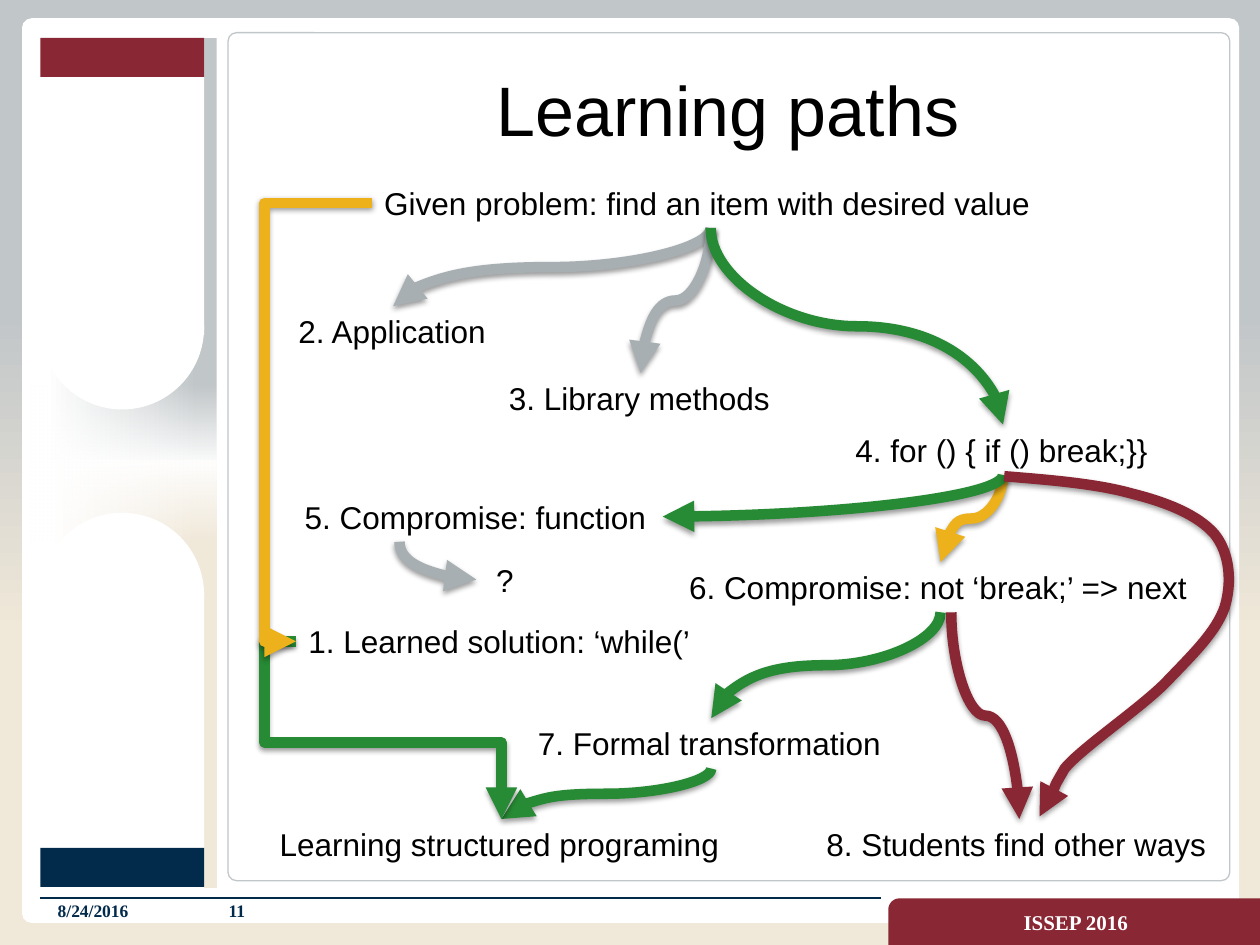
from dataclasses import dataclass

from lxml.etree import SubElement
from pptx import Presentation
from pptx.dml.color import RGBColor
from pptx.enum.shapes import MSO_CONNECTOR as Link, MSO_SHAPE as Shape
from pptx.enum.text import MSO_ANCHOR as Anchor, MSO_AUTO_SIZE as AutoSize, PP_ALIGN as Align
from pptx.oxml.ns import qn
from pptx.util import Inches, Pt


@dataclass(frozen=True)
class Theme:
    white: str = "FFFFFF"
    black: str = "000000"
    silver: str = "C1C6C8"
    sand: str = "F0E8D9"
    maroon: str = "8A2734"
    navy: str = "022A4B"
    gray: str = "A8AFB2"
    green: str = "278A34"
    amber: str = "EDB21B"
    sans: str = "Arial"
    serif: str = "Times New Roman"
    title: int = 40
    body: int = 18
    footer: int = 12
    small: int = 10
    arrow: int = 6


@dataclass(frozen=True)
class Box:
    x: float
    y: float
    w: float
    h: float

    def inner(self, x, y, w, h):
        return Box(self.x + x, self.y + y, w, h)

    def emu(self):
        return [Inches(v) for v in (self.x, self.y, self.w, self.h)]

    @property
    def top(self):
        return self.x + self.w / 2, self.y

    @property
    def bottom(self):
        return self.x + self.w / 2, self.y + self.h

    @property
    def left(self):
        return self.x, self.y + self.h / 2

    @property
    def right(self):
        return self.x + self.w, self.y + self.h / 2


T = Theme()
LABELS = {  # place in the diagram and wording
    "problem": (0.85, 0, 5.38, "Given problem: find an item with desired value"),
    "while": (0.25, 3.48, 3.26, "1. Learned solution: ‘while(’"),
    "application": (0.17, 1.02, 1.7, "2. Application"),
    "library": (1.84, 1.55, 2.29, "3. Library methods"),
    "for": (4.59, 1.96, 2.54, "4. for () { if () break;}}"),
    "function": (0.22, 2.49, 2.94, "5. Compromise: function"),
    "unknown": (1.74, 2.99, 0.34, "?"),
    "next": (3.27, 3.05, 4.19, "6. Compromise: not ‘break;’ => next"),
    "formal": (2.07, 4.29, 2.95, "7. Formal transformation"),
    "structured": (0.02, 5.09, 3.72, "Learning structured programing"),
    "others": (4.36, 5.09, 3.26, "8. Students find other ways"),
}
DOWNWARD = [
    ("problem", "application", T.gray), ("problem", "library", T.gray),
    ("problem", "for", T.green), ("for", "next", T.amber),
    ("next", "formal", T.green), ("formal", "structured", T.green),
]


def rgb(value):
    return RGBColor.from_string(value)


def add_block(slide, box, color, line=None, kind=Shape.RECTANGLE, corner=None):
    block = slide.shapes.add_shape(kind, *box.emu())
    block.shadow.inherit = False
    if color:
        block.fill.solid()
        block.fill.fore_color.rgb = rgb(color)
    if line:
        block.line.color.rgb = rgb(line)
        block.line.width = Pt(0.75)
    else:
        block.line.fill.background()
    if corner is not None:
        block.adjustments[0] = corner
    return block


def set_gradient(fill, element, angle, *stops):
    """Each stop is (position %, colour, opacity %); the angle runs clockwise."""
    fill.gradient()
    fill.gradient_angle = (360 - angle) % 360
    stop_list = element.xpath(".//a:gsLst")[0]
    for old in list(stop_list):
        stop_list.remove(old)
    for position, color, opacity in stops:
        stop = SubElement(stop_list, qn("a:gs"), pos=str(position * 1000))
        shade = SubElement(stop, qn("a:srgbClr"), val=color)
        SubElement(shade, qn("a:alpha"), val=str(opacity * 1000))


def write(shape, text, size, color=T.black, font=T.sans, bold=False, align=Align.LEFT):
    frame = shape.text_frame
    frame.text = text
    paragraph = frame.paragraphs[0]
    paragraph.alignment = align
    look = {"name": font, "size": Pt(size), "bold": bold}
    for name, value in look.items():
        setattr(paragraph.font, name, value)
    paragraph.font.color.rgb = rgb(color)
    return frame


def style_arrow(arrow, color):
    """Thick line with a triangle at its end and a soft shadow."""
    arrow.line.color.rgb = rgb(color)
    arrow.line.width = Pt(T.arrow)
    outline = arrow._element.xpath(".//a:ln")[0]
    SubElement(outline, qn("a:round"))
    SubElement(outline, qn("a:tailEnd"), type="triangle")
    effects = SubElement(arrow._element.spPr, qn("a:effectLst"))
    shadow = SubElement(effects, qn("a:outerShdw"), blurRad=str(Pt(3.1)),
                        dist=str(Pt(1.6)), dir="5400000", rotWithShape="0")
    shade = SubElement(shadow, qn("a:srgbClr"), val=T.black)
    SubElement(shade, qn("a:alpha"), val="38000")


def add_curve(slide, start, end, color, preset="curvedConnector3"):
    """Curve that leaves its start downward: a turned connector about the same centre."""
    (x1, y1), (x2, y2) = start, end
    w, h = abs(y2 - y1), abs(x2 - x1)
    x, y = (x1 + x2 - w) / 2, (y1 + y2 - h) / 2
    curve = slide.shapes.add_connector(
        Link.CURVE, *[Inches(v) for v in (x, y, x + w, y + h)])
    frame = curve._element.spPr.xfrm
    frame.set("rot", "16200000" if x2 > x1 else "5400000")
    if x2 > x1:
        frame.set("flipH", "1")
    curve._element.xpath(".//a:prstGeom")[0].set("prst", preset)
    style_arrow(curve, color)


def add_elbow(slide, start, end, color, preset, *bends):
    elbow = slide.shapes.add_connector(Link.ELBOW, *[Inches(v) for v in start + end])
    geometry = elbow._element.xpath(".//a:prstGeom")[0]
    geometry.set("prst", preset)
    guides = geometry.find(qn("a:avLst"))
    for number, bend in enumerate(bends, 1):
        SubElement(guides, qn("a:gd"), name=f"adj{number}", fmla=f"val {round(bend * 100000)}")
    style_arrow(elbow, color)


def add_detour(slide, box, points):
    """Free Bézier curve: a start, then three control points for each segment."""
    start, *controls = [(Inches(box.x + x), Inches(box.y + y)) for x, y in points]
    builder = slide.shapes.build_freeform(*start)
    builder.add_line_segments(controls, close=False)
    detour = builder.convert_to_shape()
    outline = detour._element.xpath(".//a:path")[0]
    corners = outline.findall(qn("a:lnTo"))
    for first in range(0, len(corners), 3):
        bezier = SubElement(outline, qn("a:cubicBezTo"))
        for corner in corners[first:first + 3]:
            bezier.append(corner[0])
            outline.remove(corner)
    detour.fill.background()
    style_arrow(detour, T.maroon)


def add_sidebar(slide, box):
    fades = [
        (0, 3.39, 180, (10, T.silver, 100), (90, T.white, 100)),
        (3.35, 3.4, 0, (10, T.white, 100), (90, T.sand, 100)),
        (1.31, 4.13, 90, (35, T.white, 0), (50, T.white, 95), (65, T.white, 0)),
    ]
    for y, h, angle, *stops in fades:
        fade = add_block(slide, box.inner(0, y, box.w, h), None)
        set_gradient(fade.fill, fade._element, angle, *stops)
    column = [
        (0, 2.36, T.white, Shape.RECTANGLE), (0, 0.31, T.maroon, Shape.RECTANGLE),
        (4.39, 2.36, T.white, Shape.RECTANGLE), (1.65, 1.3, T.white, Shape.OVAL),
        (3.77, 1.3, T.white, Shape.OVAL), (6.43, 0.31, T.navy, Shape.RECTANGLE),
    ]
    for y, h, color, kind in column:
        add_block(slide, box.inner(0.1, y, 1.3, h), color, kind=kind)


def add_footer(slide, box):
    rule = slide.shapes.add_connector(
        Link.STRAIGHT, *[Inches(v) for v in (box.x, box.y, box.x + 6.67, box.y)])
    rule.line.color.rgb = rgb(T.navy)
    rule.line.width = Pt(1.25)
    SubElement(rule._element.spPr, qn("a:effectLst"))
    for x, text, align in ((0.04, "8/24/2016", Align.LEFT), (1.07, "11", Align.CENTER)):
        note = slide.shapes.add_textbox(*box.inner(x, 0, 0.98, 0.2).emu())
        frame = write(note, text, T.small, T.navy, T.serif, True, align)
        frame.word_wrap = True
        frame.vertical_anchor = Anchor.MIDDLE
    event = add_block(slide, box.inner(6.73, 0, 2.95, box.h), T.maroon,
                      kind=Shape.ROUND_1_RECTANGLE, corner=0.24)
    event._element.spPr.xfrm.set("flipH", "1")
    frame = write(event, "ISSEP 2016", T.footer, T.white, T.serif, True, Align.CENTER)
    frame.vertical_anchor = Anchor.MIDDLE


def add_title(slide, box):
    title = slide.shapes.title
    title.left, title.top, title.width, title.height = box.emu()
    write(title, "Learning paths", T.title, align=Align.CENTER).vertical_anchor = Anchor.MIDDLE
    slide.shapes._spTree.append(title._element)


def add_paths(slide, box):
    places = {}
    for key, (x, y, w, text) in LABELS.items():
        places[key] = box.inner(x, y, w, 0.4)
        label = slide.shapes.add_textbox(*places[key].emu())
        frame = write(label, text, T.body)
        frame.word_wrap = False
        frame.auto_size = AutoSize.SHAPE_TO_FIT_TEXT

    for source, target, color in DOWNWARD:
        add_curve(slide, places[source].bottom, places[target].top, color)
    add_curve(slide, places["for"].bottom, places["function"].right, T.green, "curvedConnector2")
    add_curve(slide, (box.x + 1.07, box.y + 2.89), (box.x + 1.68, box.y + 3.19),
              T.gray, "curvedConnector2")
    add_curve(slide, (box.x + 5.45, box.y + 3.45), places["others"].top, T.maroon)

    learned, goal, given = places["while"].left, places["structured"].top, places["problem"].left
    lane = learned[0] - box.x  # both elbows run along the left edge of the box
    add_elbow(slide, learned, goal, T.green, "bentConnector4", -lane / (goal[0] - learned[0]), 0.57)
    add_elbow(slide, given, learned, T.amber, "bentConnector3",
              (given[0] - box.x) / (given[0] - learned[0]))
    add_detour(slide, box, [
        (5.87, 2.37), (6.24, 2.4), (6.61, 2.43), (6.89, 2.51),
        (7.17, 2.58), (7.41, 2.68), (7.54, 2.83), (7.66, 2.98), (7.68, 3.21), (7.62, 3.41),
        (7.55, 3.61), (7.36, 3.79), (7.15, 4.01), (6.94, 4.22), (6.48, 4.53), (6.35, 4.69),
        (6.25, 4.86), (6.2, 5.02), (6.15, 5.07)])


def main():
    deck = Presentation()
    deck.slide_width, deck.slide_height = Inches(10), Inches(7.5)
    slide = deck.slides.add_slide(deck.slide_layouts[5])
    set_gradient(slide.background.fill, slide._element, 90,
                 (33, T.silver, 100), (67, T.sand, 100))
    add_block(slide, Box(0.18, 0.15, 9.65, 7.17), T.white, T.white, Shape.ROUNDED_RECTANGLE, 0.01)
    add_sidebar(slide, Box(0.22, 0.3, 1.5, 6.75))
    add_block(slide, Box(1.81, 0.26, 7.95, 6.73), T.white, T.silver, Shape.ROUNDED_RECTANGLE, 0.01)
    add_footer(slide, Box(0.32, 7.13, 9.68, 0.37))
    add_title(slide, Box(1.84, 0.31, 7.87, 1.1))
    add_paths(slide, Box(2.1, 1.41, 7.65, 5.49))
    deck.save("out.pptx")


if __name__ == "__main__":
    main()
